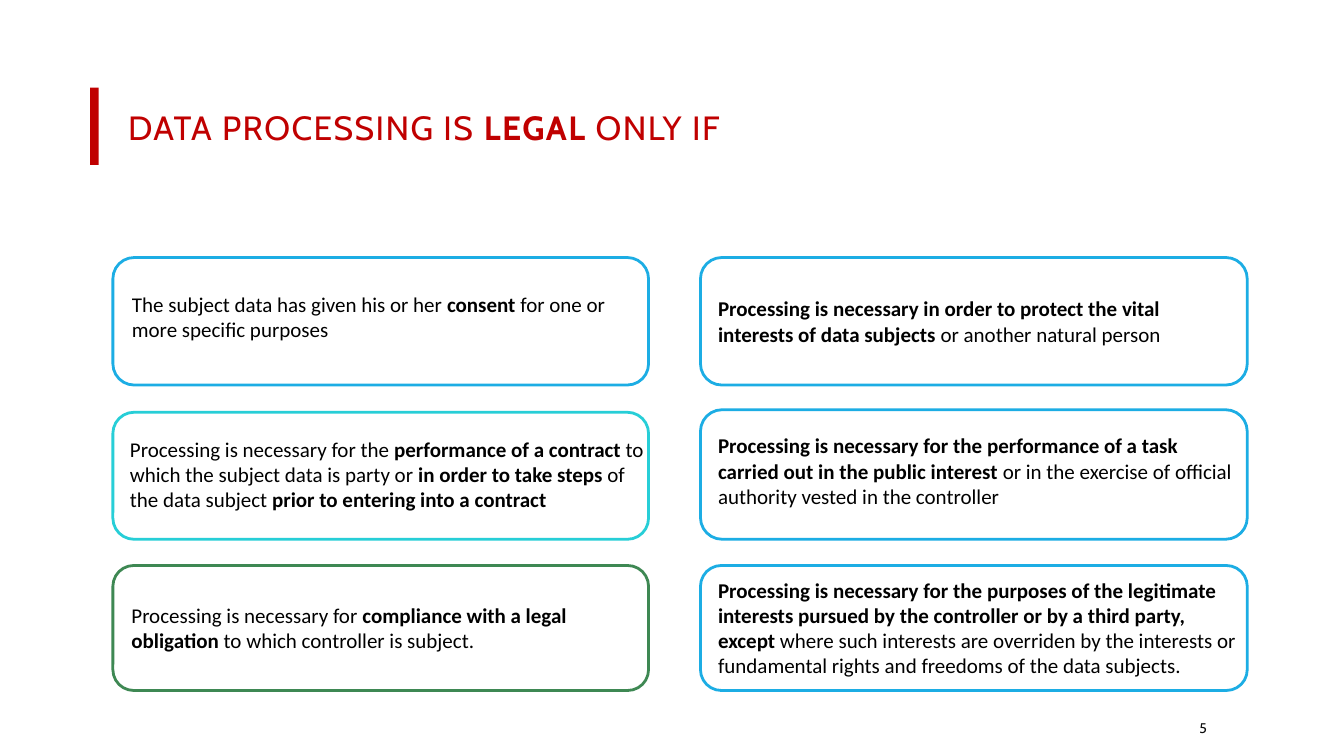
from dataclasses import dataclass

from pptx import Presentation
from pptx import util as u
from pptx.dml.color import RGBColor
from pptx.enum import shapes, text


@dataclass(frozen=True)
class Theme:
    red: str = "C00000"
    blue: str = "1CADE4"
    teal: str = "27CED7"
    green: str = "3E8853"
    ink: str = "000000"
    dark: str = "0D0D0D"
    head: str = "Cabin"
    body: str = "Calibri"
    big: int = 48
    mid: int = 30
    small: int = 20
    edge: int = 4


T = Theme()
WIDE, HIGH = 26.67, 15
COLS = ((2.24, 10.63), (13.9, 10.85))  # left, width
ROWS = ((5.11, 2.53), (8.18, 2.52), (11.22, 2.48))  # top, height
LINE, PAD = 0.51, 0.1

# column, row, edge colour, rise of the top edge,
# text inset, text drop, text width, lines, words (** marks bold)
CARDS = (
    (0, 0, T.blue, 0, 0.28, 0.62, 10.1, 2,
     "The subject data has given his or her **consent **for one or more specific purposes"),
    (0, 1, T.teal, 0, 0.24, 0.43, 10.39, 3,
     "Processing is necessary for the **performance of a contract **to which the subject data "
     "is party or** in order to take steps **of the data subject **prior to entering into a contract"),
    (0, 2, T.green, 0, 0.27, 0.69, 10.1, 2,
     "Processing is necessary for **compliance with a legal obligation **to which controller is subject."),
    (1, 0, T.blue, 0, 0.25, 0.71, 10.45, 2,
     "**Processing is necessary in order to protect the vital interests of data subjects "
     "**or another natural person"),
    (1, 1, T.blue, 0.05, 0.25, 0.36, 10.6, 3,
     "**Processing is necessary for the performance of a task carried out in the public interest "
     "**or in the exercise of official authority vested in the controller"),
    (1, 2, T.blue, 0, 0.25, 0.18, 10.6, 4,
     "**Processing is necessary for the purposes of the legitimate interests pursued by the "
     "controller or by a third party, except** where such interests are overriden by the "
     "interests or fundamental rights and freedoms of the data subjects."),
)


def rgb(code):
    return RGBColor.from_string(code)


def box(*lengths):
    return [u.Inches(n) for n in lengths]


def write(frame, words, size=T.mid, font=T.body, color=T.ink, space=0,
          lead=None, anchor=text.MSO_ANCHOR.TOP, fit=text.MSO_AUTO_SIZE.NONE):
    """Fill a text frame; every second part between ** marks is bold."""
    frame.word_wrap = True
    frame.auto_size = fit
    frame.vertical_anchor = anchor
    para = frame.paragraphs[0]
    para.alignment = text.PP_ALIGN.LEFT
    if lead:
        para.line_spacing = lead
    for i, part in enumerate(words.split("**")):
        if not part:
            continue
        run = para.add_run()
        run.text = part
        run.font.size = u.Pt(size)
        run.font.name = font
        run.font.bold = i % 2 == 1
        run.font.color.rgb = rgb(color)
        if space:
            run._r.get_or_add_rPr().set("spc", str(space * 100))


def shape(slide, kind, place, fill=None, line=None):
    item = slide.shapes.add_shape(kind, *box(*place))
    item.shadow.inherit = False
    if fill:
        item.fill.solid()
        item.fill.fore_color.rgb = rgb(fill)
    else:
        item.fill.background()
    if line:
        item.line.color.rgb = rgb(line)
        item.line.width = u.Pt(T.edge)
    else:
        item.line.fill.background()


def label(slide, place, words, **style):
    write(slide.shapes.add_textbox(*box(*place)).text_frame, words, **style)


def card(slide, col, row, color, rise, inset, drop, width, lines, words):
    (left, wide), (top, high) = COLS[col], ROWS[row]
    shape(slide, shapes.MSO_SHAPE.ROUNDED_RECTANGLE,
          (left, top - rise, wide, high + rise), line=color)
    label(slide, (left + inset, top + drop, width, lines * LINE + PAD), words,
          fit=text.MSO_AUTO_SIZE.SHAPE_TO_FIT_TEXT)


def title(slide, words):
    head = slide.shapes.title
    head.left, head.top, head.width, head.height = box(2.44, 0.95, 22.16, 3.28)
    write(head.text_frame, words, size=T.big, font=T.head, color=T.red,
          space=2, lead=0.8, anchor=text.MSO_ANCHOR.MIDDLE)
    shape(slide, shapes.MSO_SHAPE.RECTANGLE, (1.79, 1.74, 0.17, 1.53), fill=T.red)


def main():
    deck = Presentation()
    deck.slide_width, deck.slide_height = box(WIDE, HIGH)
    slide = deck.slides.add_slide(deck.slide_layouts[5])
    title(slide, "DATA PROCESSING IS **LEGAL** ONLY IF")
    for item in CARDS:
        card(slide, *item)
    label(slide, (23.7, 14.15, 2.13, 0.6), "5", size=T.small, font=T.head,
          color=T.dark, anchor=text.MSO_ANCHOR.MIDDLE)
    deck.save("out.pptx")


if __name__ == "__main__":
    main()
